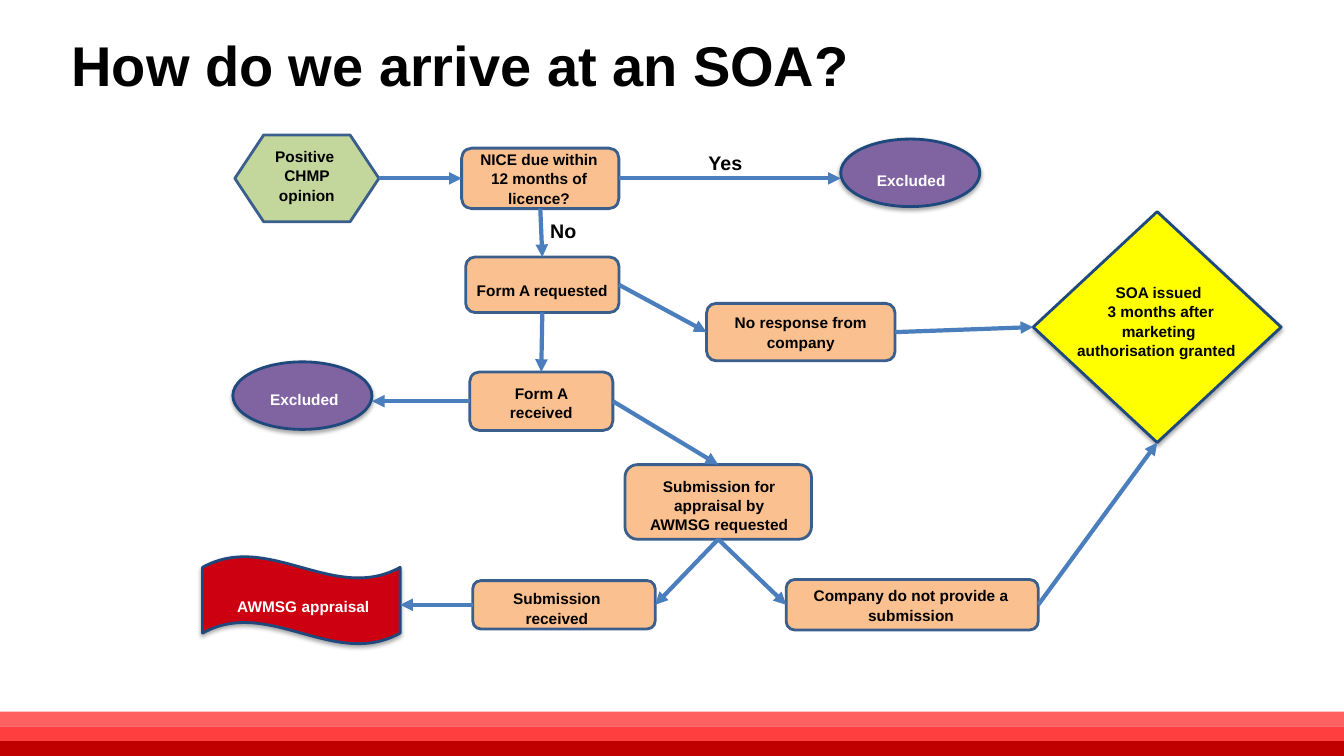
from collections import namedtuple
from lxml import etree
from pptx import Presentation, util as u
from pptx.dml.color import RGBColor
from pptx.enum import shapes, text
from pptx.oxml import ns

CELL = u.Inches(0.1)
COLUMNS, ROWS = 133.33, 75
TOP, LEFT, BOTTOM, RIGHT = range(4)
FONT = "Arial"
KIND = shapes.MSO_SHAPE
STEP = KIND.FLOWCHART_ALTERNATE_PROCESS
Box = namedtuple("Box", "left top width height")
Style = namedtuple("Style", "kind fill line ink shadow")

STYLES = {
    "step": Style(STEP, "FAC090", "3A5F8C", "000000", False),
    "start": Style(KIND.FLOWCHART_PREPARATION, "C3D69B", "3A5F8C", "000000", False),
    "excluded": Style(KIND.OVAL, "8064A2", "1F497D", "FFFFFF", True),
    "appraisal": Style(KIND.WAVE, "CC0011", "1F497D", "FFFFFF", True),
    "issued": Style(KIND.DIAMOND, "FFFF00", "1F497D", "000000", True),
}

# name: style, box, label, side padding, label shift
NODES = {
    "opinion": ("start", (3.3, 0.4, 14.3, 8.6), ["Positive ", "CHMP opinion"], 0, (0, -0.3)),
    "nice": ("step", (25.8, 1.7, 15.6, 6), ["NICE due within 12 months of licence?"], 1, (-0.1, 0)),
    "requested": ("step", (26.2, 12.5, 15.2, 5.5), ["Form A requested"], 0.4, (0, 0.5)),
    "received": ("step", (26.6, 23.9, 14.2, 5.8), ["Form A received"], 2, (0, 0.1)),
    "silent": ("step", (50.1, 17.1, 18.7, 5.7), ["No response from company"], 1, (0, 0)),
    "submission": ("step", (42, 33.1, 18.5, 7.4),
                   ["Submission for appraisal by AWMSG requested"], 1.5, (0.1, 0.3)),
    "submitted": ("step", (26.9, 44.6, 18.1, 4.8), ["Submission received"], 2.5, (-0.7, 0.3)),
    "refused": ("step", (58, 44.5, 25, 5), ["Company do not provide a submission"], 1, (-0.1, 0)),
    "excluded early": ("excluded", (63.4, 0.8, 13.8, 6.7), ["Excluded"], 0, (0.1, 0.7)),
    "excluded late": ("excluded", (3.1, 22.9, 13.8, 6.7), ["Excluded"], 0, (0.2, 0.3)),
    "appraisal": ("appraisal", (0.1, 42.2, 19.6, 8.7), ["AWMSG appraisal"], 0, (0.2, 0.6)),
    "issued": ("issued", (82.5, 8, 24.6, 22.9), [], 0, (0, 0)),
}
LINKS = [
    ("opinion", RIGHT, "nice", LEFT),
    ("nice", RIGHT, "excluded early", LEFT),
    ("nice", BOTTOM, "requested", TOP),
    ("requested", RIGHT, "silent", LEFT),
    ("requested", BOTTOM, "received", TOP),
    ("silent", RIGHT, "issued", LEFT),
    ("received", LEFT, "excluded late", RIGHT),
    ("received", RIGHT, "submission", TOP),
    ("submission", BOTTOM, "submitted", RIGHT),
    ("submission", BOTTOM, "refused", LEFT),
    ("submitted", LEFT, "appraisal", RIGHT),
    ("refused", RIGHT, "issued", BOTTOM),
]


def color(value):
    return RGBColor.from_string(value)


def cells(*counts):
    return [round(count * CELL) for count in counts]


def inside(box, left, top, width, height):
    return cells(box.left + left, box.top + top, width, height)


def write(shape, lines, size, ink="000000", align=text.PP_ALIGN.LEFT, spacing=1.0):
    frame = shape.text_frame
    frame.word_wrap = True
    for index, line in enumerate(lines):
        para = frame.paragraphs[0] if index == 0 else frame.add_paragraph()
        para.alignment = align
        para.line_spacing = spacing
        span = para.add_run()
        span.text = line
        span.font.name, span.font.size, span.font.bold = FONT, u.Pt(size), True
        span.font.color.rgb = color(ink)
    return frame


def write_label(shape, lines, ink):
    return write(shape, lines, 11, ink, text.PP_ALIGN.CENTER, 1.05)


def add_shadow(shape):
    properties = shape.element.spPr
    effects = properties.find(ns.qn("a:effectLst"))
    shadow = etree.SubElement(effects, ns.qn("a:outerShdw"), blurRad=str(u.Pt(3.1)),
                              dist=str(u.Pt(1.8)), dir="5400000", rotWithShape="0")
    tint = etree.SubElement(shadow, ns.qn("a:srgbClr"), val="000000")
    etree.SubElement(tint, ns.qn("a:alpha"), val="35000")


def add_node(page, box, style, place, lines, padding, shift):
    shape = page.shapes.add_shape(style.kind, *inside(box, *place))
    shape.shadow.inherit = False
    if style.shadow:
        add_shadow(shape)
    shape.fill.solid()
    shape.fill.fore_color.rgb = color(style.fill)
    shape.line.color.rgb = color(style.line)
    shape.line.width = u.Pt(2)
    across, down = shift
    frame = write_label(shape, lines, style.ink)
    frame.vertical_anchor = text.MSO_ANCHOR.MIDDLE
    frame.margin_left, frame.margin_right = cells(padding + max(2 * across, 0),
                                                  padding + max(-2 * across, 0))
    frame.margin_top, frame.margin_bottom = cells(max(2 * down, 0), max(-2 * down, 0))
    return shape


def add_link(page, source, source_side, target, target_side):
    link = page.shapes.add_connector(shapes.MSO_CONNECTOR.STRAIGHT, 0, 0, 0, 0)
    link.begin_connect(source, source_side)
    if target.auto_shape_type in (KIND.OVAL, KIND.WAVE):
        link.end_x = target.left + (target.width if target_side == RIGHT else 0)
        link.end_y = link.begin_y
    else:
        link.end_connect(target, target_side)
    link.line.color.rgb = color("4B7EBC")
    link.line.width = u.Pt(3)
    etree.SubElement(link.line._get_or_add_ln(), ns.qn("a:tailEnd"), type="triangle")
    etree.SubElement(link.element.spPr, ns.qn("a:effectLst"))


def draw_title(page, box):
    title = page.shapes.title
    title.left, title.top, title.width, title.height = inside(box, 0, 0, box.width, box.height)
    frame = write(title, ["How do we arrive at an SOA?"], 40)
    frame.vertical_anchor = text.MSO_ANCHOR.MIDDLE
    frame.auto_size = text.MSO_AUTO_SIZE.NONE


def draw_flow(page, box):
    nodes = {}
    for name, (style, *details) in NODES.items():
        nodes[name] = add_node(page, box, STYLES[style], *details)
    for source, source_side, target, target_side in LINKS:
        add_link(page, nodes[source], source_side, nodes[target], target_side)
    for answer, left, top in (("Yes", 49.3, 1.5), ("No", 33.6, 8.2)):
        label = page.shapes.add_textbox(*inside(box, left, top, 6.8, 2.9))
        write(label, [answer], 14)
    outcome = page.shapes.add_textbox(*inside(box, 85.3, 14.5, 19.3, 10.8))
    frame = write_label(outcome, ["SOA issued",
                                  " 3 months after marketing authorisation granted "], "000000")
    frame.margin_left = frame.margin_right = round(1.5 * CELL)


def draw_footer(page, box):
    tints = ("FF6161", "FF3F3F", "C00000")
    height = box.height / len(tints)
    for index, tint in enumerate(tints):
        stripe = page.shapes.add_shape(
            KIND.RECTANGLE, *inside(box, 0, index * height, box.width, height))
        stripe.shadow.inherit = False
        stripe.fill.solid()
        stripe.fill.fore_color.rgb = color(tint)
        stripe.line.fill.background()


def main():
    deck = Presentation()
    deck.slide_width, deck.slide_height = cells(COLUMNS, ROWS)
    page = deck.slides.add_slide(deck.slide_layouts[5])
    draw_footer(page, Box(0, 70.6, COLUMNS, 4.4))
    draw_flow(page, Box(20, 13, 107.1, 50.9))
    draw_title(page, Box(6.1, 2.5, 86, 7.7))
    deck.save("out.pptx")


if __name__ == "__main__":
    main()
